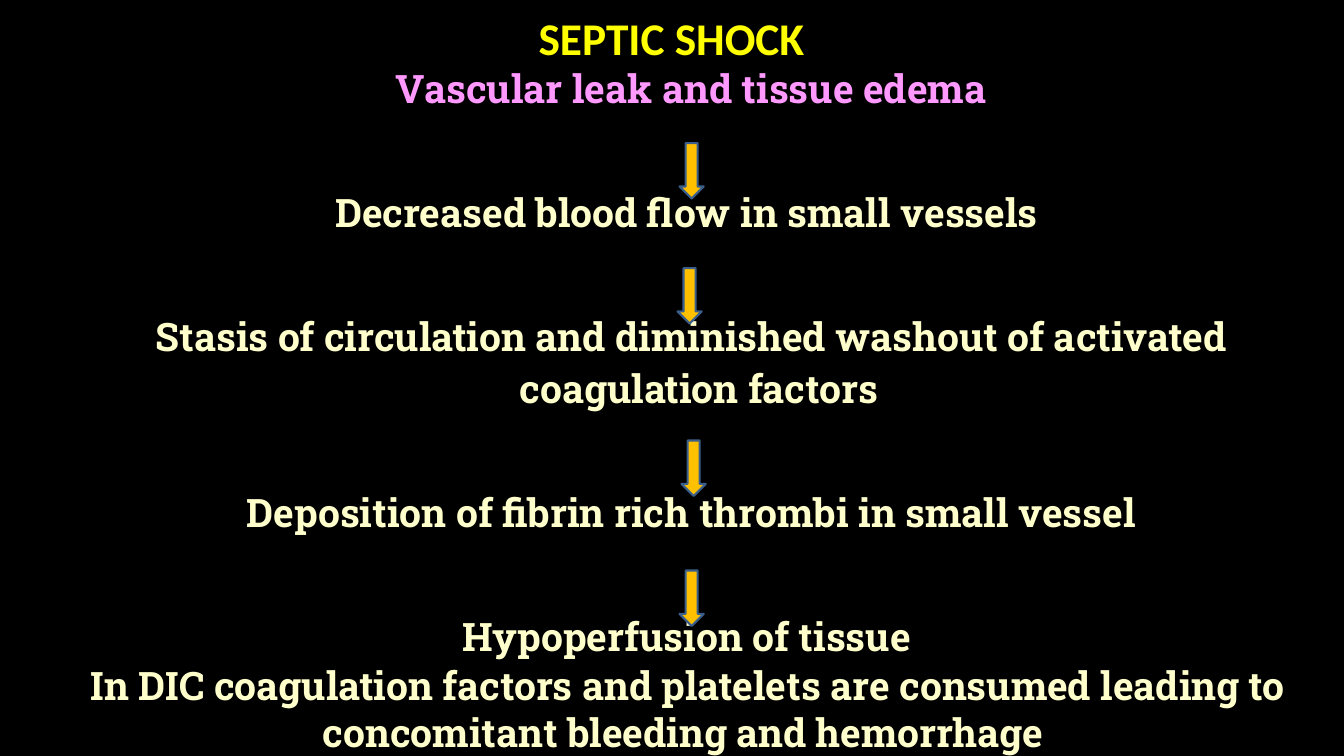
from dataclasses import dataclass
from typing import Any

from pptx import Presentation
from pptx.dml.color import RGBColor
from pptx.enum.shapes import MSO_SHAPE
from pptx.enum.text import MSO_ANCHOR, MSO_AUTO_SIZE, PP_ALIGN
from pptx.util import Emu, Pt

DOWN = MSO_SHAPE.DOWN_ARROW
CENTER = PP_ALIGN.CENTER
TOP, MIDDLE = MSO_ANCHOR.TOP, MSO_ANCHOR.MIDDLE
FIXED = MSO_AUTO_SIZE.NONE
TITLE_ONLY = 5
SCALE = 9144


def px(n: int) -> Emu:
    return Emu(n * SCALE)


@dataclass(frozen=True)
class Theme:
    back: RGBColor = RGBColor(0, 0, 0)
    title: RGBColor = RGBColor(0xFF, 0xFF, 0)
    lead: RGBColor = RGBColor(0xFF, 0x99, 0xFF)
    text: RGBColor = RGBColor(0xFF, 0xFF, 0xCC)
    arrow: RGBColor = RGBColor(0xFF, 0xC0, 0)
    edge: RGBColor = RGBColor(0x3A, 0x5F, 0x8C)
    head: str = "Calibri"
    body: str = "Roboto Slab"
    big: Pt = Pt(32.4)
    size: Pt = Pt(28)
    rule: Pt = Pt(1.5)


@dataclass(frozen=True)
class Box:
    left: int
    top: int
    width: int
    height: int

    def emu(self) -> list[Emu]:
        return [px(n) for n in (self.left, self.top, self.width, self.height)]


@dataclass(frozen=True)
class Step:
    text: str
    color: RGBColor
    before: float
    spread: float = 1.1
    indent: int = 25


THEME = Theme()
FIRST, GAP = 10, 51.7
TITLE = Box(100, 14, 1132, 53)
FLOW = Box(68, 54, 1235, 639)
NOTE = Box(31, 651, 1302, 135)
ARROWS = [Box(x, y, 24, 55) for x, y in ((674, 142), (672, 266), (676, 437), (674, 566))]
STEPS = [
    Step("Vascular leak and tissue edema", THEME.lead, FIRST),
    Step("Decreased blood flow in small vessels ", THEME.text, GAP),
    Step("Stasis of circulation and diminished washout of activated coagulation factors ", THEME.text, GAP),
    Step("Deposition of fibrin rich thrombi in small vessel", THEME.text, GAP),
    Step("Hypoperfusion of tissue ", THEME.text, GAP),
]
END = Step(
    "In DIC coagulation factors and platelets are consumed leading to concomitant bleeding and hemorrhage ",
    THEME.text, 0, 1.0, 0,
)


def apply(item: Any, form: dict[str, Any]) -> None:
    for key, value in form.items():
        setattr(item, key, value)


def style(run: Any, name: str, size: Pt, color: RGBColor) -> None:
    apply(run.font, {"name": name, "size": size, "bold": True})
    run.font.color.rgb = color


def add_title(slide: Any, text: str) -> None:
    shape = slide.shapes.title
    apply(shape, dict(zip(("left", "top", "width", "height"), TITLE.emu())))
    frame = shape.text_frame
    apply(frame, {"word_wrap": True, "vertical_anchor": MIDDLE, "auto_size": FIXED})
    para = frame.paragraphs[0]
    apply(para, {"alignment": CENTER, "line_spacing": 0.9})
    run = para.add_run()
    run.text = text
    style(run, THEME.head, THEME.big, THEME.title)


def add_text(slide: Any, box: Box, steps: list[Step]) -> None:
    frame = slide.shapes.add_textbox(*box.emu()).text_frame
    apply(frame, {"word_wrap": True, "vertical_anchor": TOP, "auto_size": FIXED})
    for i, step in enumerate(steps):
        para = frame.add_paragraph() if i else frame.paragraphs[0]
        apply(para, {"alignment": CENTER, "line_spacing": step.spread, "space_before": Pt(step.before)})
        props = para._p.get_or_add_pPr()
        props.set("marL", str(px(step.indent)))
        props.set("indent", str(px(-step.indent)))
        run = para.add_run()
        run.text = step.text
        style(run, THEME.body, THEME.size, step.color)


def add_arrow(slide: Any, box: Box) -> None:
    shape = slide.shapes.add_shape(DOWN, *box.emu())
    shape.shadow.inherit = False
    shape.fill.solid()
    shape.fill.fore_color.rgb = THEME.arrow
    shape.line.color.rgb = THEME.edge
    shape.line.width = THEME.rule


def main() -> None:
    deck = Presentation()
    apply(deck, {"slide_width": px(1333), "slide_height": px(750)})
    slide = deck.slides.add_slide(deck.slide_layouts[TITLE_ONLY])
    fill = slide.background.fill
    fill.solid()
    fill.fore_color.rgb = THEME.back
    add_title(slide, "SEPTIC SHOCK")
    add_text(slide, FLOW, STEPS)
    for box in ARROWS:
        add_arrow(slide, box)
    add_text(slide, NOTE, [END])
    deck.save("out.pptx")


if __name__ == "__main__":
    main()
